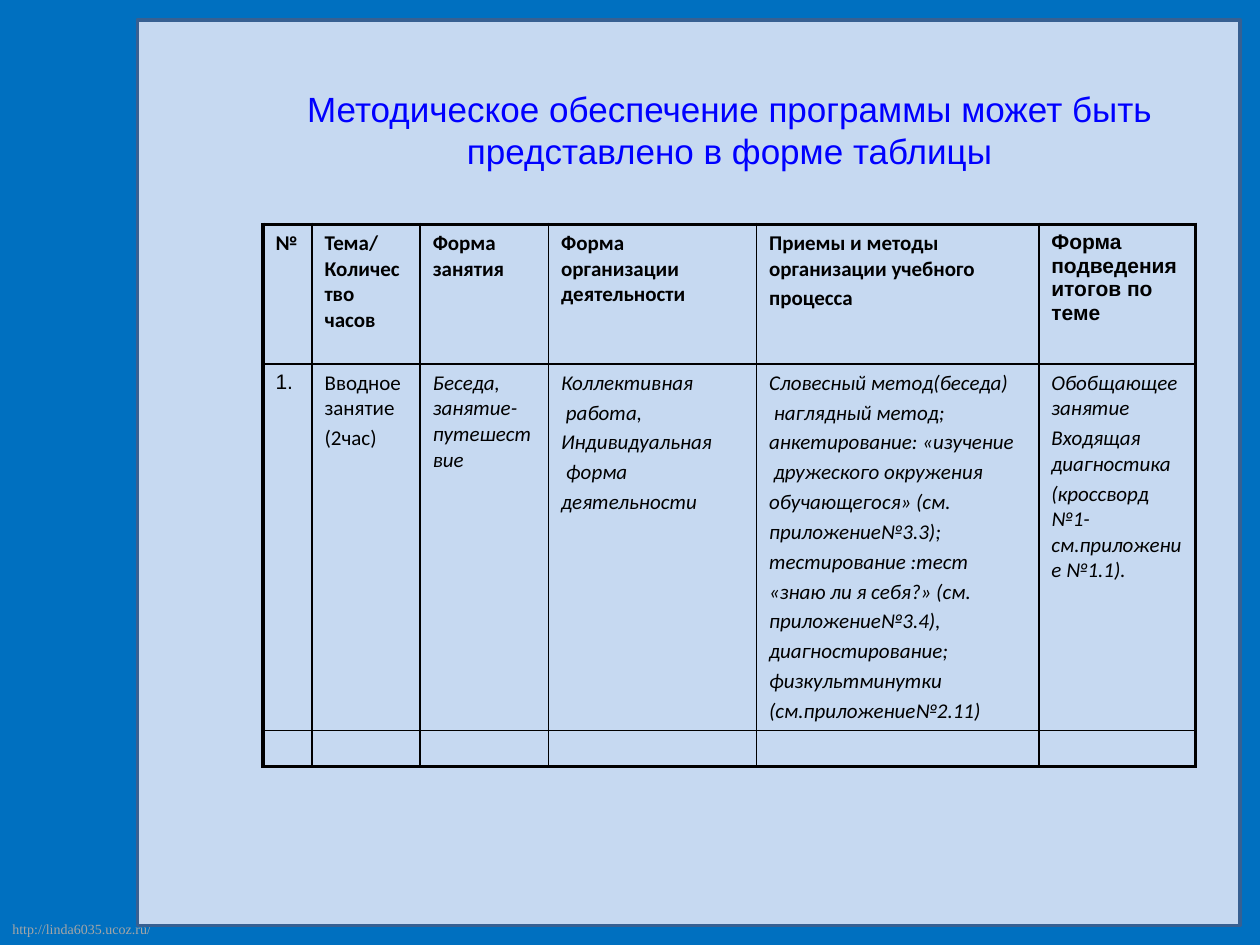
from pptx import Presentation
from pptx.dml.color import RGBColor
from pptx.enum.shapes import MSO_SHAPE as Shape
from pptx.enum.text import MSO_ANCHOR as Anchor, PP_ALIGN as Align
from pptx.oxml import parse_xml
from pptx.oxml.ns import nsdecls
from pptx.util import Cm, Pt

# Content
TITLE = "Методическое обеспечение программы может быть представлено в форме таблицы"
SITE = "http://linda6035.ucoz.ru/"
HEAD = [
    ["№"],
    ["Тема/Количество часов"],
    ["Форма занятия"],
    ["Форма организации деятельности"],
    ["Приемы и методы организации учебного", "процесса"],
    ["Форма подведения итогов по теме"],
]
LESSON = [
    ["1."],
    ["Вводное занятие", "(2час)"],
    ["Беседа, занятие-путешествие"],
    ["Коллективная", " работа,", "Индивидуальная", " форма", "деятельности"],
    ["Словесный метод(беседа)", " наглядный метод;",
     "анкетирование: «изучение", " дружеского окружения",
     "обучающегося» (см.", "приложение№3.3);", "тестирование :тест",
     "«знаю ли я себя?» (см.", "приложение№3.4),", "диагностирование;",
     "физкультминутки", "(см.приложение№2.11)"],
    ["Обобщающее занятие", "Входящая диагностика",
     "(кроссворд №1-см.приложение №1.1)."],
]
ROWS = [HEAD, LESSON, [[] for _ in HEAD]]
WIDTHS = [0.99, 2.18, 2.59, 4.19, 5.69, 3.16]
HEIGHTS = [2.82, 7.39, 0.72]
ARIAL = {(0, 5), (1, 0)}  # cells not set in Calibri
THICK, THIN = 2.25, 1


def color(code):
    return RGBColor.from_string(code)


def style(par, name, size, code, bold=False, italic=False):
    font = par.font
    font.name, font.size = name, Pt(size)
    font.bold, font.italic = bold, italic
    font.color.rgb = color(code)


def border(cell, side, width):
    cell._tc.get_or_add_tcPr().append(parse_xml(
        f'<a:ln{side} {nsdecls("a")} w="{Pt(width)}"><a:solidFill>'
        f'<a:srgbClr val="000000"/></a:solidFill></a:ln{side}>'))


def fill_cell(cell, row, col, lines):
    edges = {"L": col == 0, "R": col == len(WIDTHS) - 1,
             "T": row == 0, "B": row == len(ROWS) - 1}
    for side, outer in edges.items():
        border(cell, side, THICK if outer else THIN)
    cell.fill.background()
    if not lines:
        cell.margin_top = cell.margin_bottom = 0
    frame = cell.text_frame
    frame.text = "\n".join(lines)
    for i, par in enumerate(frame.paragraphs):
        if i:
            par.space_before = Pt(2.4)
        style(par, "Arial" if (row, col) in ARIAL else "Calibri", 12,
              "000000", bold=row == 0, italic=row == 1 and col > 1)


deck = Presentation()
deck.slide_width, deck.slide_height = Cm(25.4), Cm(19.05)
slide = deck.slides.add_slide(deck.slide_layouts[5])
shapes = slide.shapes
title = shapes.title

# Background and panel
slide.background.fill.solid()
slide.background.fill.fore_color.rgb = color("0070C0")

site = shapes.add_textbox(Cm(0), Cm(18.44), Cm(3.33), Cm(0.61))
site.text_frame.word_wrap = False
site.text_frame.text = SITE
style(site.text_frame.paragraphs[0], "Times New Roman", 8, "A6A6A6")

panel = shapes.add_shape(Shape.RECTANGLE, Cm(2.77), Cm(0.4), Cm(22.23), Cm(18.26))
panel.shadow.inherit = False
panel.fill.solid()
panel.fill.fore_color.rgb = color("C6D9F1")
panel.line.color.rgb = color("376092")
panel.line.width = Pt(2)

# Title, brought in front of the panel
panel._element.addnext(title._element)
title.left, title.top, title.width, title.height = Cm(5.3), Cm(0.76), Cm(18.82), Cm(3.18)
frame = title.text_frame
frame.text = TITLE
frame.word_wrap = True
frame.vertical_anchor = Anchor.BOTTOM
frame.margin_bottom = Cm(0.48)
frame.paragraphs[0].alignment = Align.CENTER
style(frame.paragraphs[0], "Arial", 20, "0000FF")

# Table
table = shapes.add_table(len(ROWS), len(WIDTHS), Cm(5.3), Cm(4.52),
                         Cm(sum(WIDTHS)), Cm(sum(HEIGHTS))).table
table.first_row = table.horz_banding = False
for column, width in zip(table.columns, WIDTHS):
    column.width = Cm(width)
for r, (height, cells) in enumerate(zip(HEIGHTS, ROWS)):
    table.rows[r].height = Cm(height)
    for c, lines in enumerate(cells):
        fill_cell(table.cell(r, c), r, c, lines)

deck.save("out.pptx")
